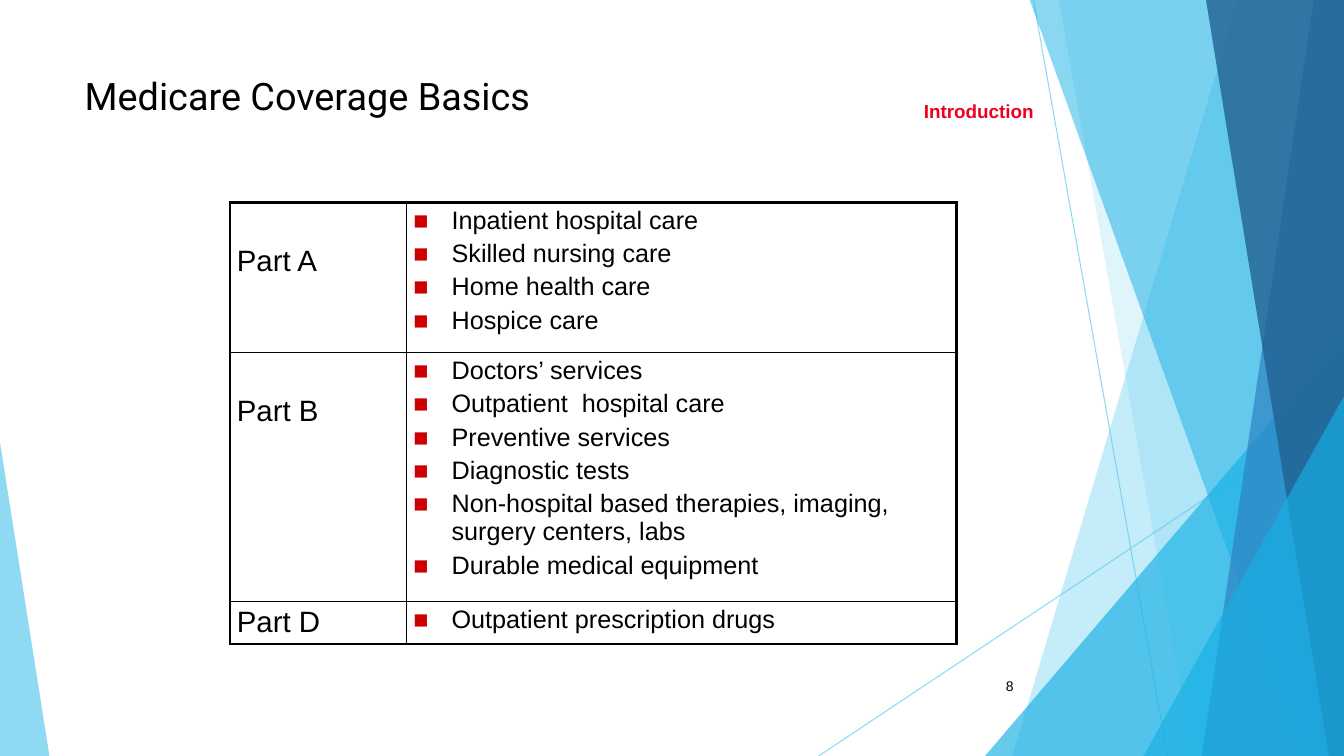
from lxml.etree import SubElement
from pptx import Presentation
from pptx.dml.color import RGBColor as Rgb
from pptx.enum.shapes import MSO_CONNECTOR as Link, MSO_SHAPE as Form
from pptx.enum.text import MSO_ANCHOR as Anchor, MSO_AUTO_SIZE as Auto, PP_ALIGN as Align
from pptx.oxml import parse_xml
from pptx.oxml.ns import nsdecls, qn
from pptx.util import Inches, Pt

WIDE, HIGH = 13.33, 7.5
INK = {"text": "000000", "tag": "ED0123", "bullet": "CC0000", "sky": "5FCBEF",
       "cyan": "17B0E4", "blue": "2E83C3", "navy": "226292"}
# Each part: label, space above the label, row height, covered services
PARTS = [
    ("Part A", 0.42, 1.49, ["Inpatient hospital care", "Skilled nursing care",
                            "Home health care", "Hospice care"]),
    ("Part B", 0.42, 2.47, ["Doctors’ services", "Outpatient  hospital care",
                            "Preventive services", "Diagnostic tests",
                            "Non-hospital based therapies, imaging, surgery centers, labs",
                            "Durable medical equipment"]),
    ("Part D", 0.04, 0.42, ["Outpatient prescription drugs"]),
]


class Deck:
    def __init__(self):
        self.file = Presentation()
        self.file.slide_width, self.file.slide_height = Inches(WIDE), Inches(HIGH)
        self.slide = self.file.slides.add_slide(self.file.slide_layouts[5])
        self.shapes = self.slide.shapes

    def fade(self, fill, ink, alpha):
        """Give a fill a solid colour with the opacity alpha, in percent."""
        fill.solid()
        fill.fore_color.rgb = Rgb.from_string(INK[ink])
        tone = fill._xPr.find(".//" + qn("a:srgbClr"))
        SubElement(tone, qn("a:alpha")).set("val", str(alpha * 1000))

    def ray(self, *ends):
        line = self.shapes.add_connector(Link.STRAIGHT, *map(Inches, ends))
        line.line.width = Pt(0.75)
        self.fade(line.line.fill, "sky", 70)
        SubElement(line.element.spPr, qn("a:effectLst"))

    def plain(self, shape, ink, alpha):
        shape.shadow.inherit = False
        shape.line.fill.background()
        self.fade(shape.fill, ink, alpha)

    def beam(self, top, foot, ink, alpha):
        """Draw a full-height band from a slanted left side to the slide's right edge."""
        pen = self.shapes.build_freeform(Inches(top), Inches(-0.01))
        spots = [(WIDE, -0.01), (WIDE, HIGH), (foot, HIGH)]
        pen.add_line_segments([(Inches(x), Inches(y)) for x, y in spots], close=True)
        self.plain(pen.convert_to_shape(), ink, alpha)

    def wedge(self, left, top, right, tip, ink, alpha):
        """Draw a triangle on the bottom edge; tip is 0 for left, 1 for right."""
        box = map(Inches, (left, top, right - left, HIGH - top))
        shape = self.shapes.add_shape(Form.ISOSCELES_TRIANGLE, *box)
        shape.adjustments[0] = tip
        self.plain(shape, ink, alpha)

    def style(self, para, size, ink="text", face="Arial", bold=False):
        for run in para.runs:
            font = run.font
            font.size, font.name, font.bold = Pt(size), face, bold
            font.color.rgb = Rgb.from_string(INK[ink])

    def title(self, text, *box):
        shape = self.shapes.title
        shape.left, shape.top, shape.width, shape.height = map(Inches, box)
        self.shapes.element.append(shape.element)
        frame = shape.text_frame
        frame.text = text
        frame.auto_size, frame.vertical_anchor = Auto.NONE, Anchor.TOP
        frame.paragraphs[0].alignment = Align.LEFT
        self.style(frame.paragraphs[0], 27, face="Roboto")

    def label(self, text, box, size, anchor=Anchor.TOP, **look):
        frame = self.shapes.add_textbox(*map(Inches, box)).text_frame
        frame.word_wrap, frame.vertical_anchor = True, anchor
        frame.text = text
        frame.paragraphs[0].alignment = Align.RIGHT
        self.style(frame.paragraphs[0], size, **look)

    def bullet(self, para):
        para.space_before = Pt(3.6)
        props = para._p.get_or_add_pPr()
        props.set("marL", str(Inches(0.38)))
        props.set("indent", str(Inches(-0.38)))
        tint = SubElement(props, qn("a:buClr"))
        SubElement(tint, qn("a:srgbClr")).set("val", INK["bullet"])
        SubElement(props, qn("a:buFont")).set("typeface", "Arial")
        SubElement(props, qn("a:buChar")).set("char", "■")

    def edge(self, cell, outer):
        """Line all four sides of a cell, thicker on the sides named in outer."""
        props = cell._tc.get_or_add_tcPr()
        for spot, side in enumerate("LRTB"):
            width = Pt(2.25 if side in outer else 1)
            props.insert(spot, parse_xml(
                f'<a:ln{side} {nsdecls("a")} w="{width}"><a:solidFill>'
                f'<a:srgbClr val="{INK["text"]}"/></a:solidFill></a:ln{side}>'))

    def cell(self, cell, lines, size, top, outer, listed):
        cell.fill.background()
        cell.margin_left = cell.margin_right = Inches(0.07)
        cell.margin_top, cell.margin_bottom = Inches(top), Inches(0.04)
        cell.text_frame.text = "\n".join(lines)
        for para in cell.text_frame.paragraphs:
            self.style(para, size)
            if listed:
                self.bullet(para)
        self.edge(cell, outer)

    def table(self, parts, *box):
        grid = self.shapes.add_table(len(parts), 2, *map(Inches, box)).table
        grid.first_row = grid.horz_banding = False
        for col, width in zip(grid.columns, (1.75, 5.46)):
            col.width = Inches(width)
        for i, (name, top, height, items) in enumerate(parts):
            grid.rows[i].height = Inches(height)
            ends = ("T" if i == 0 else "") + ("B" if i == len(parts) - 1 else "")
            self.cell(grid.cell(i, 0), [name], 21, top, "L" + ends, False)
            self.cell(grid.cell(i, 1), items, 18, 0.04, "R" + ends, True)


def main():
    deck = Deck()
    deck.ray(10.25, 0, 11.58, HIGH)
    deck.ray(WIDE, 4.03, 8.12, HIGH)
    deck.beam(12.28, 10.04, "sky", 36)
    deck.beam(10.5, 11.83, "sky", 20)
    deck.wedge(9.77, 3.33, WIDE, 1, "cyan", 66)
    deck.beam(10.21, 12.91, "cyan", 50)
    deck.beam(13.03, 11.92, "blue", 70)
    deck.beam(11.96, 13.18, "navy", 80)
    deck.wedge(11.34, 3.93, WIDE, 1, "cyan", 66)
    deck.wedge(0, 4.39, 0.49, 0, "sky", 70)
    deck.title("Medicare Coverage Basics", 0.74, 0.67, 9.4, 1.44)
    deck.table(PARTS, 2.28, 2.01, 7.21, 4.38)
    deck.label("8", (9.4, 6.61, 0.75, 0.4), 10, Anchor.MIDDLE)
    deck.label("Introduction", (8.28, 0.94, 2.07, 0.33), 13.5, ink="tag", bold=True)
    deck.file.save("out.pptx")


if __name__ == "__main__":
    main()
